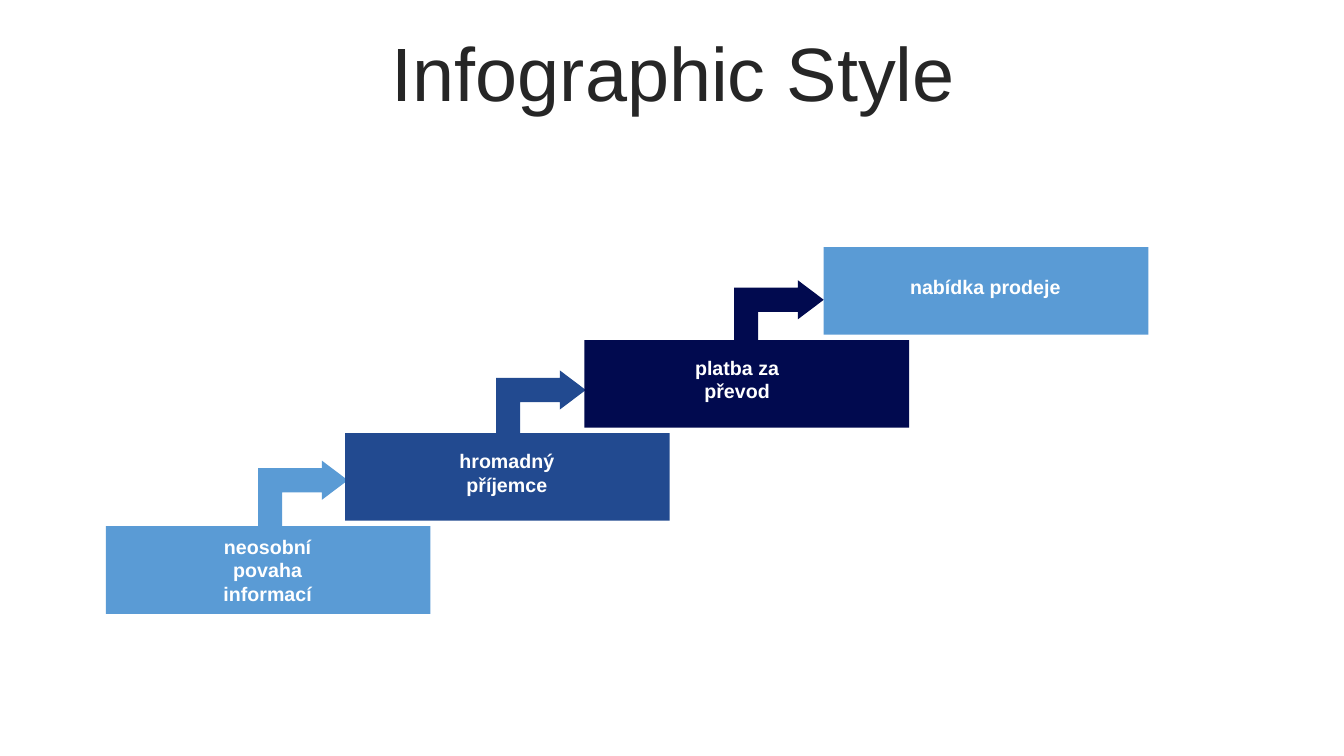
import dataclasses
import pptx
import pptx.dml.color
import pptx.enum.shapes
import pptx.enum.text
import pptx.util

Inches = pptx.util.Inches
Pt = pptx.util.Pt


@dataclasses.dataclass(frozen=True)
class Theme:
    font: str = "Arial"
    title_size: int = 54
    label_size: int = 14
    ink: str = "262626"
    white: str = "FFFFFF"
    sky: str = "5A9BD5"
    blue: str = "224A90"
    navy: str = "010A4F"


THEME = Theme()
STEP_SIZE = (3.22, 0.87)
STEP_PITCH = (2.373, -0.923)
ARROW_SIZE = (0.65, 0.89)
ARROW_START = (1.63, -0.77)
ARROW_PITCH = (2.36, -0.895)
ARROW_ADJUSTMENTS = (0.368, 0.299, 0.397)

STEPS = [
    ("neosobní povaha informací", THEME.sky, (0.74, 0.03), 0.81),
    ("hromadný příjemce", THEME.blue, (0.74, 0.11), 0.57),
    ("platba za převod", THEME.navy, (0.65, 0.22), 0.34),
    ("nabídka prodeje", THEME.sky, (0.74, 0.22), 0.34),
]
LABEL_WIDTH = 1.73


def rgb(value):
    return pptx.dml.color.RGBColor.from_string(value)


def add_text(page, box, text, size, color, bold=False):
    frame = page.shapes.add_textbox(*map(Inches, box)).text_frame
    frame.word_wrap = True
    frame.vertical_anchor = pptx.enum.text.MSO_ANCHOR.MIDDLE
    para = frame.paragraphs[0]
    para.alignment = pptx.enum.text.PP_ALIGN.CENTER
    span = para.add_run()
    span.text = text
    span.font.name = THEME.font
    span.font.size = Pt(size)
    span.font.bold = bold
    span.font.color.rgb = rgb(color)
    return frame


def add_filled(page, kind, box, color):
    shape = page.shapes.add_shape(kind, *map(Inches, box))
    shape.shadow.inherit = False
    shape.fill.solid()
    shape.fill.fore_color.rgb = rgb(color)
    shape.line.fill.background()
    return shape


def add_title(page, box):
    frame = add_text(page, box, "Infographic Style", THEME.title_size, THEME.ink)
    para = frame.paragraphs[0]
    para.line_spacing = 0.9
    para.space_before = Pt(10)


def add_arrow(page, box, color):
    kind = pptx.enum.shapes.MSO_SHAPE.BENT_UP_ARROW
    arrow = add_filled(page, kind, box, color)
    for index, value in enumerate(ARROW_ADJUSTMENTS):
        arrow.adjustments[index] = value
    arrow.rotation = 270
    arrow._element.spPr.xfrm.set("flipV", "1")


def add_step(page, box, step):
    left, top, width, height = box
    text, color, (label_x, label_y), label_height = step
    add_filled(page, pptx.enum.shapes.MSO_SHAPE.RECTANGLE, box, color)
    label_box = (left + label_x, top + label_y, LABEL_WIDTH, label_height)
    frame = add_text(page, label_box, text, THEME.label_size, THEME.white, True)
    frame.auto_size = pptx.enum.text.MSO_AUTO_SIZE.SHAPE_TO_FIT_TEXT


def add_staircase(page, left, top):
    for index, step in enumerate(STEPS):
        step_left = left + index * STEP_PITCH[0]
        step_top = top + index * STEP_PITCH[1]
        add_step(page, (step_left, step_top, *STEP_SIZE), step)
        if index < len(STEPS) - 1:
            arrow_left = left + ARROW_START[0] + index * ARROW_PITCH[0]
            arrow_top = top + ARROW_START[1] + index * ARROW_PITCH[1]
            add_arrow(page, (arrow_left, arrow_top, *ARROW_SIZE), step[1])


def main():
    deck = pptx.Presentation()
    deck.slide_width = Inches(13.33)
    deck.slide_height = Inches(7.5)
    page = deck.slides.add_slide(deck.slide_layouts[6])
    add_title(page, (0.35, 0.37, 12.66, 0.79))
    add_staircase(page, 1.05, 5.22)
    deck.save("out.pptx")


if __name__ == "__main__":
    main()
